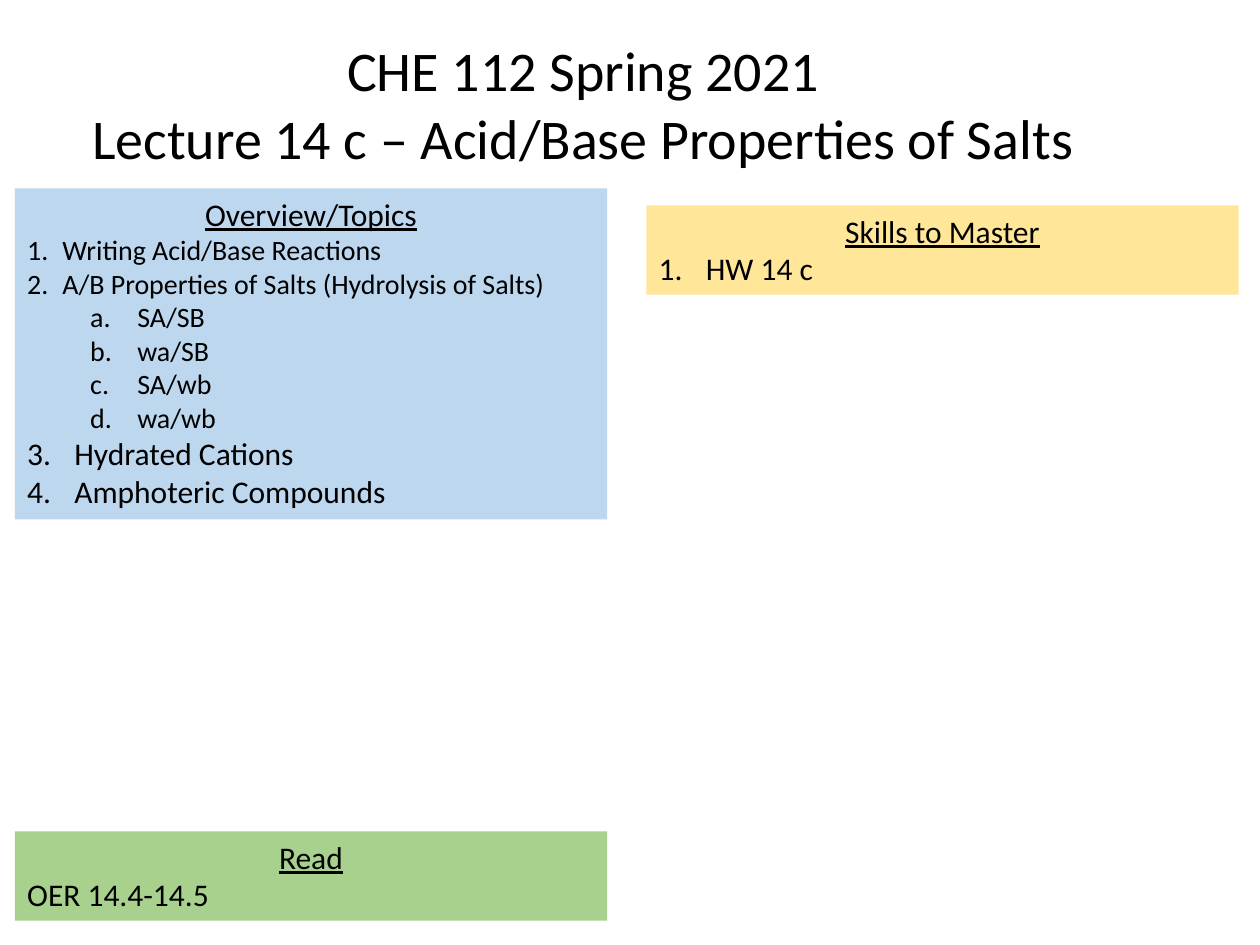
from pptx import Presentation
from pptx.dml.color import RGBColor
from pptx.enum.text import MSO_ANCHOR, MSO_AUTO_SIZE, PP_ALIGN
from pptx.oxml.xmlchemy import OxmlElement
from pptx.util import Cm, Pt

BLUE = RGBColor(0xBD, 0xD7, 0xEE)
YELLOW = RGBColor(0xFF, 0xE6, 0x99)
GREEN = RGBColor(0xA9, 0xD1, 0x8E)
BLACK = RGBColor(0, 0, 0)
CENTER = PP_ALIGN.CENTER
LEFT = PP_ALIGN.LEFT
MIDDLE = MSO_ANCHOR.MIDDLE
FIT_SHAPE = MSO_AUTO_SIZE.SHAPE_TO_FIT_TEXT
NO_FIT = MSO_AUTO_SIZE.NONE

FONT = "Calibri"
PANEL_WIDTH = Cm(11.94)
LEFT_COLUMN = Cm(0.3)
RIGHT_COLUMN = Cm(13.03)
NUMBERS = "arabicPeriod"
LETTERS = "alphaLcPeriod"


def format_line(line, size, align=LEFT, underline=False):
    line.alignment = align
    for run in line.runs:
        run.font.name = FONT
        run.font.size = Pt(size)
        run.font.color.rgb = BLACK
        run.font.underline = underline


def number_line(line, scheme, margin, hanging):
    properties = line._p.get_or_add_pPr()
    properties.set("marL", str(margin))
    properties.set("indent", str(-hanging))
    numbering = OxmlElement("a:buAutoNum")
    numbering.set("type", scheme)
    properties.append(numbering)


def add_title(slide, lines):
    title = slide.shapes.title
    title.left, title.top = Cm(1.5), Cm(0.58)
    title.width, title.height = Cm(20.52), Cm(3)
    frame = title.text_frame
    frame.text = "\n".join(lines)
    frame.word_wrap = False
    frame.auto_size = NO_FIT
    frame.vertical_anchor = MIDDLE
    for line in frame.paragraphs:
        line.space_before = Pt(0)
        format_line(line, 32, CENTER)


def add_panel(slide, left, top, height, color, heading):
    panel = slide.shapes.add_textbox(left, top, PANEL_WIDTH, height)
    panel.fill.solid()
    panel.fill.fore_color.rgb = color
    frame = panel.text_frame
    frame.word_wrap = True
    frame.auto_size = FIT_SHAPE
    frame.text = heading
    format_line(frame.paragraphs[0], 18, CENTER, True)
    return frame


def add_entry(frame, text, size=18):
    entry = frame.add_paragraph()
    entry.text = text
    format_line(entry, size)
    return entry


def add_topic(frame, text, size=18, hanging=Cm(0.95)):
    number_line(add_entry(frame, text, size), NUMBERS, hanging, hanging)


def add_subtopic(frame, text):
    subtopic = add_entry(frame, text, 16)
    subtopic.level = 1
    number_line(subtopic, LETTERS, Cm(2.22), Cm(0.95))


def main():
    deck = Presentation()
    deck.slide_width, deck.slide_height = Cm(25.4), Cm(19.05)
    slide = deck.slides.add_slide(deck.slide_layouts[5])

    add_title(slide, ["CHE 112 Spring 2021",
                      "Lecture 14 c – Acid/Base Properties of Salts"])

    overview = add_panel(slide, LEFT_COLUMN, Cm(3.8), Cm(6.67), BLUE, "Overview/Topics")
    for topic in ("Writing Acid/Base Reactions",
                  "A/B Properties of Salts (Hydrolysis of Salts)"):
        add_topic(overview, topic, 16, Cm(0.71))
    for salt in ("SA/SB", "wa/SB", "SA/wb", "wa/wb"):
        add_subtopic(overview, salt)
    for topic in ("Hydrated Cations", "Amphoteric Compounds"):
        add_topic(overview, topic)

    skills = add_panel(slide, RIGHT_COLUMN, Cm(4.14), Cm(1.8), YELLOW, "Skills to Master")
    add_topic(skills, "HW 14 c")

    reading = add_panel(slide, LEFT_COLUMN, Cm(16.76), Cm(1.8), GREEN, "Read")
    add_entry(reading, "OER 14.4-14.5")

    deck.save("out.pptx")


if __name__ == "__main__":
    main()
